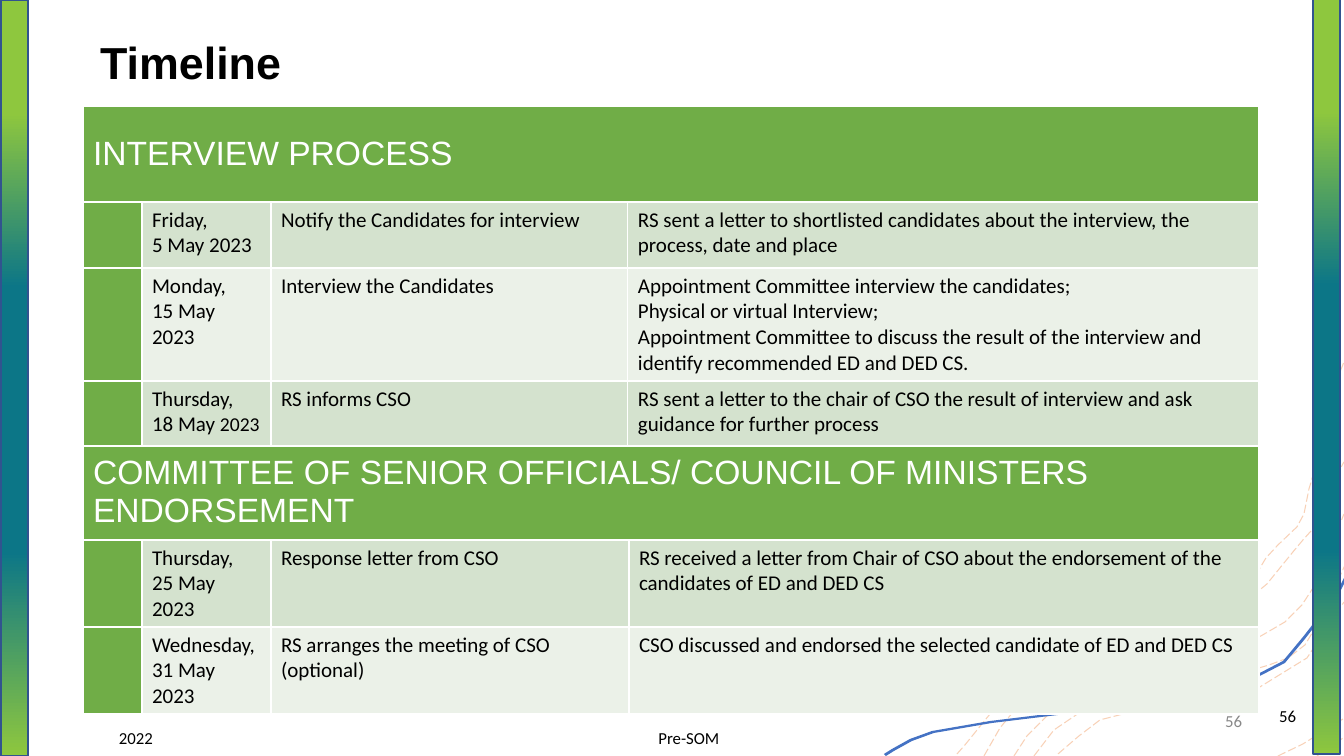
from lxml import etree
from pptx import Presentation
from pptx.dml.color import RGBColor
from pptx.enum.dml import MSO_LINE
from pptx.enum.shapes import MSO_SHAPE
from pptx.enum.text import MSO_ANCHOR, PP_ALIGN
from pptx.oxml.ns import qn
from pptx.util import Pt

LEFT, CENTER, RIGHT = PP_ALIGN.LEFT, PP_ALIGN.CENTER, PP_ALIGN.RIGHT
MIDDLE, TOP = MSO_ANCHOR.MIDDLE, MSO_ANCHOR.TOP
RECTANGLE, LONG_DASH = MSO_SHAPE.RECTANGLE, MSO_LINE.LONG_DASH

# Content
COLORS = {
    "black": "000000", "white": "FFFFFF", "gray": "888888", "green": "70AD47",
    "band_dark": "D4E2CE", "band_light": "EBF1E8", "lime": "8EC73E",
    "teal": "0C7687", "edge": "31538F", "orange": "ED7D31", "blue": "4472C4",
}
TITLE = "Timeline"
# Each line of a cell is a string, or a tuple of (text, size) spans
INTERVIEW = {
    "heading": "INTERVIEW PROCESS",
    "top": 106, "columns": [59, 129, 357, 631], "heights": [96, 66, 113, 65],
    "steps": [
        (["Friday,", "5 May 2023"],
         ["Notify the Candidates for interview"],
         ["RS sent a letter to shortlisted candidates about the interview, the process, date and place"]),
        (["Monday,", "15 May 2023"],
         ["Interview the Candidates"],
         ["Appointment Committee interview the candidates;",
          "Physical or virtual Interview;",
          "Appointment Committee to discuss the result of the interview and identify recommended ED and DED CS."]),
        (["Thursday,", (("18 May ", 15), ("2023", 14))],
         ["RS informs CSO"],
         ["RS sent a letter to the chair of CSO the result of interview and ask guidance for further process"]),
    ],
}
ENDORSEMENT = {
    "heading": "COMMITTEE OF SENIOR OFFICIALS/ COUNCIL OF MINISTERS ENDORSEMENT",
    "top": 444, "columns": [59, 129, 358, 630], "heights": [96, 87, 87],
    "steps": [
        (["Thursday,", "25 May 2023"],
         ["Response letter from CSO"],
         ["RS received a letter from Chair of CSO about the endorsement of the candidates of ED and DED CS"]),
        (["Wednesday,", "31 May 2023"],
         ["RS arranges the meeting of CSO (optional)"],
         ["CSO discussed and endorsed the selected candidate of ED and DED CS"]),
    ],
}
TABLE_LEFT = 83
# text, left, top, width, alignment, colour
FOOTERS = [
    ("56", 950, 701, 302, RIGHT, "gray"),
    ("Pre-SOM", 462, 718, 454, CENTER, "black"),
    ("2022", 109, 718, 302, LEFT, "black"),
    ("56", 1004, 696, 302, RIGHT, "black"),
]
SIDE_BARS = [(1313, -2), (1, 0)]
BAR_STOPS = [(0, "lime"), (15, "lime"), (38, "teal"), (73, "teal"), (100, "lime")]
DASHED_WAVES = [
    [(957, 754), (965, 745), (986, 719), (1001, 701), (1017, 685), (1047, 665),
     (1072, 648), (1094, 635), (1114, 630), (1129, 632), (1153, 634), (1171, 625),
     (1189, 612), (1217, 601), (1241, 590), (1257, 573), (1266, 558), (1278, 545),
     (1297, 527), (1304, 514), (1309, 489), (1321, 449), (1326, 407), (1344, 362)],
    [(984, 756), (1000, 728), (1023, 700), (1045, 682), (1064, 667), (1091, 650),
     (1119, 643), (1138, 646), (1162, 646), (1180, 638), (1191, 629), (1212, 615),
     (1235, 605), (1250, 598), (1267, 584), (1280, 568), (1293, 552), (1303, 540),
     (1312, 530), (1318, 515), (1325, 496), (1344, 462)],
    [(1317, 756), (1346, 736)],
    [(1278, 756), (1303, 744), (1343, 719)],
    [(1058, 754), (1079, 736), (1100, 720), (1135, 711), (1162, 705), (1187, 707),
     (1205, 709), (1234, 703), (1281, 674), (1307, 658), (1344, 602)],
    [(1034, 756), (1054, 730), (1088, 707), (1123, 698), (1165, 690), (1201, 686),
     (1232, 676), (1269, 665), (1288, 658), (1305, 645), (1320, 620), (1346, 563)],
    [(1014, 756), (1027, 736), (1057, 706), (1087, 685), (1116, 680), (1141, 677),
     (1159, 675), (1201, 663), (1231, 648), (1261, 636), (1285, 622), (1302, 605),
     (1317, 582), (1344, 514)],
]
BLUE_WAVE = [
    (1346, 580), (1338, 596), (1319, 621), (1305, 639), (1285, 663), (1256, 678),
    (1226, 685), (1203, 690), (1166, 699), (1115, 710), (1076, 714), (1058, 715),
    (992, 723), (934, 733), (912, 741), (894, 751), (886, 756)]
RIBBON = 2

# Helpers
SCALE = 914400 / 100.8


def px(length):
    return round(length * SCALE)


def color(name):
    return RGBColor.from_string(COLORS[name])


def write(frame, lines, size, font, shade, align=LEFT, bold=False):
    for index, line in enumerate(lines):
        para = frame.paragraphs[0] if index == 0 else frame.add_paragraph()
        para.alignment = align
        for text, points in ([(line, size)] if isinstance(line, str) else line):
            span = para.add_run()
            span.text = text
            for key, value in {"size": Pt(points), "name": font, "bold": bold}.items():
                setattr(span.font, key, value)
            span.font.color.rgb = color(shade)


def add_outline(points, close):
    builder = page.shapes.build_freeform(*points[0], scale=SCALE)
    builder.add_line_segments(points[1:], close=close)
    shape = builder.convert_to_shape()
    shape.shadow.inherit = False
    return shape


def fill_cell(cell, shade):
    cell.fill.solid()
    cell.fill.fore_color.rgb = color(shade)


def add_schedule(schedule):
    columns, heights = schedule["columns"], schedule["heights"]
    table = page.shapes.add_table(
        len(heights), len(columns), px(TABLE_LEFT), px(schedule["top"]),
        px(sum(columns)), px(sum(heights))).table
    for column, width in zip(table.columns, columns):
        column.width = px(width)
    for row, height in zip(table.rows, heights):
        row.height = px(height)
    heading = table.cell(0, 0)
    heading.merge(table.cell(0, len(columns) - 1))
    heading.vertical_anchor = MIDDLE
    fill_cell(heading, "green")
    write(heading.text_frame, [schedule["heading"]], 24, "Arial", "white", bold=None)
    for number, step in enumerate(schedule["steps"], 1):
        fill_cell(table.cell(number, 0), "green")
        for column, lines in enumerate(step, 1):
            cell = table.cell(number, column)
            fill_cell(cell, "band_dark" if number % 2 else "band_light")
            cell.vertical_anchor = TOP
            write(cell.text_frame, lines, 15, "Calibri", "black")


deck = Presentation()
deck.slide_width, deck.slide_height = px(1344), px(756)
page = deck.slides.add_slide(deck.slide_layouts[5])

# Title
title = page.shapes.title
for key, value in {"left": 90, "top": 30, "width": 921, "height": 70}.items():
    setattr(title, key, px(value))
title.text_frame.vertical_anchor = MIDDLE
write(title.text_frame, [TITLE], 32, "Arial", "black", bold=True)
title.text_frame.paragraphs[0].line_spacing = 0.9

# Corner waves
for points in DASHED_WAVES:
    wave = add_outline(points, False)
    wave.fill.background()
    wave.line.color.rgb = color("orange")
    wave.line.width, wave.line.dash_style = Pt(0.75), LONG_DASH
    tint = wave.line._ln.find(".//" + qn("a:srgbClr"))
    etree.SubElement(tint, qn("a:alpha"), val="34000")
upper = [(x - RIBBON, y - RIBBON) for x, y in reversed(BLUE_WAVE)]
ribbon = add_outline(BLUE_WAVE + upper, True)
ribbon.fill.solid()
ribbon.fill.fore_color.rgb = color("blue")
ribbon.line.fill.background()

# Side bars
for left, top in SIDE_BARS:
    bar = page.shapes.add_shape(RECTANGLE, px(left), px(top), px(27), px(756))
    bar.shadow.inherit = False
    bar.line.color.rgb, bar.line.width = color("edge"), Pt(1)
    bar.fill.gradient()
    bar.fill.gradient_angle = 270
    stops = bar._element.spPr.find(".//" + qn("a:gsLst"))
    for stop in list(stops):
        stops.remove(stop)
    for percent, name in BAR_STOPS:
        stop = etree.SubElement(stops, qn("a:gs"), pos=str(percent * 1000))
        etree.SubElement(stop, qn("a:srgbClr"), val=COLORS[name])

# Footer texts
for text, left, top, width, align, shade in FOOTERS:
    box = page.shapes.add_textbox(px(left), px(top), px(width), px(40))
    box.text_frame.word_wrap = True
    box.text_frame.vertical_anchor = MIDDLE
    write(box.text_frame, [text], 12, "Calibri", shade, align)

# Tables
for schedule in (ENDORSEMENT, INTERVIEW):
    add_schedule(schedule)

deck.save("out.pptx")
